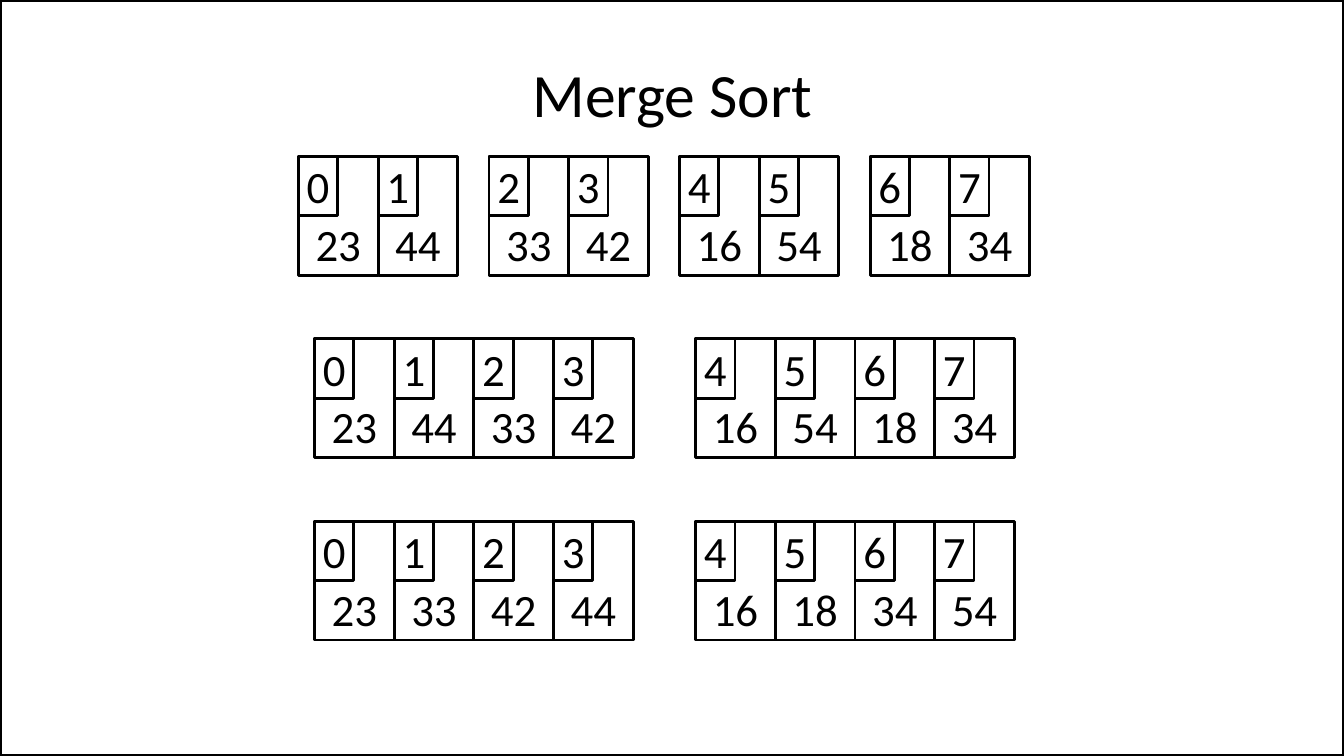
import pptx
import pptx.util
import pptx.dml.color
import pptx.enum.shapes
import pptx.enum.text

Inches = pptx.util.Inches
ANCHOR = pptx.enum.text.MSO_ANCHOR
COLORS = {"ink": "000000", "paper": "FFFFFF"}


def write(tf, text, size=32, anchor=ANCHOR.MIDDLE, side=0.1):
    tf.word_wrap = True
    tf.vertical_anchor = anchor
    tf.margin_left = tf.margin_right = Inches(side)
    p = tf.paragraphs[0]
    p.alignment = pptx.enum.text.PP_ALIGN.CENTER
    r = p.add_run()
    r.text = text
    r.font.name = "Calibri"
    r.font.size = pptx.util.Pt(size)
    r.font.color.rgb = pptx.dml.color.RGBColor.from_string(COLORS["ink"])


def add_box(s, x, y, w, h, line=2):
    sp = s.shapes.add_shape(pptx.enum.shapes.MSO_SHAPE.RECTANGLE,
                            Inches(x), Inches(y), Inches(w), Inches(h))
    sp.shadow.inherit = False
    sp.fill.background()
    sp.line.color.rgb = pptx.dml.color.RGBColor.from_string(COLORS["ink"])
    sp.line.width = pptx.util.Pt(line)
    return sp


prs = pptx.Presentation()
prs.slide_width, prs.slide_height = Inches(13.33), Inches(7.5)
s = prs.slides.add_slide(prs.slide_layouts[5])
s.background.fill.solid()
s.background.fill.fore_color.rgb = pptx.dml.color.RGBColor.from_string(COLORS["paper"])

# Slide border
add_box(s, 0, 0, 13.33, 7.5, line=3)

# Title
title = s.shapes.title
title.left, title.top = Inches(0.67), Inches(0.3)
title.width, title.height = Inches(12), Inches(1.25)
write(title.text_frame, "Merge Sort", size=44)

# Array rows: group size, left of first group, distance between groups, values
CELL_W, CELL_H = 0.79, 1.18
INDEX_W, INDEX_H = 0.39, 0.59
TOP, ROW_STEP = 1.55, 1.81
rows = [
    (2, 2.96, 1.89, [23, 44, 33, 42, 16, 54, 18, 34]),
    (4, 3.12, 3.78, [23, 44, 33, 42, 16, 54, 18, 34]),
    (4, 3.12, 3.78, [23, 33, 42, 44, 16, 18, 34, 54]),
]
for row, (size, left, step, values) in enumerate(rows):
    y = TOP + row * ROW_STEP
    for i, value in enumerate(values):
        group, pos = divmod(i, size)
        x = left + group * step + pos * CELL_W
        cell = add_box(s, x, y, CELL_W, CELL_H)
        write(cell.text_frame, str(value), anchor=ANCHOR.BOTTOM)
        index = add_box(s, x, y, INDEX_W, INDEX_H)
        write(index.text_frame, str(i), side=0)

prs.save("out.pptx")
